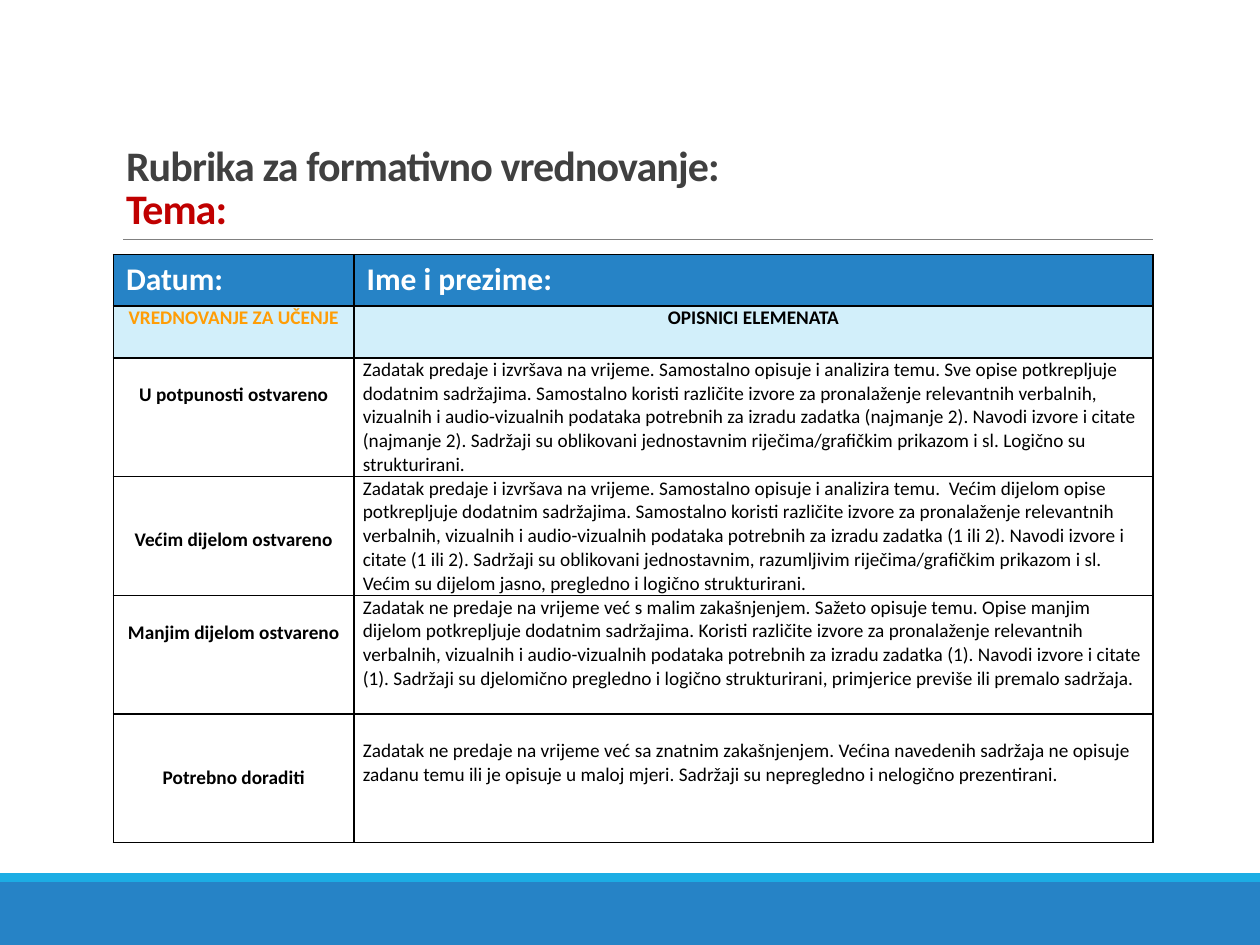
from pptx import Presentation
from pptx.dml.color import RGBColor
from pptx.enum import shapes, text
from pptx.oxml import parse_xml
from pptx.oxml.ns import nsdecls
from pptx.util import Inches, Pt

WIDTH, HEIGHT = 10, 7.5
LEFT, TABLE_TOP, TABLE_WIDTH = 0.9, 2.02, 8.25
FONT = "Calibri"
BLUE, CYAN, PALE, WHITE, BLACK = "2683C6", "1CADE4", "D2EFFA", "FFFFFF", "000000"

TITLE = [("Rubrika za formativno vrednovanje:", "404040"), ("Tema:", "C00000")]
BANDS = [(7, 0.5, BLUE), (6.93, 0.07, CYAN)]
COLUMNS = [1.91, 6.34]
HEADER = ["Datum:", "Ime i prezime:"]
SUBHEADER = [("VREDNOVANJE ZA UČENJE", "FF9D05"), ("OPISNICI ELEMENATA", BLACK)]
LEVELS = [
    ("U potpunosti ostvareno", 0.2, 0,
     "Zadatak predaje i izvršava na vrijeme. Samostalno opisuje i analizira temu. "
     "Sve opise potkrepljuje dodatnim sadržajima. Samostalno koristi različite izvore "
     "za pronalaženje relevantnih verbalnih, vizualnih i audio-vizualnih podataka "
     "potrebnih za izradu zadatka (najmanje 2). Navodi izvore i citate (najmanje 2). "
     "Sadržaji su oblikovani jednostavnim riječima/grafičkim prikazom i sl. "
     "Logično su strukturirani."),
    ("Većim dijelom ostvareno", 0.41, 0,
     "Zadatak predaje i izvršava na vrijeme. Samostalno opisuje i analizira temu.  "
     "Većim dijelom opise potkrepljuje dodatnim sadržajima. Samostalno koristi različite "
     "izvore za pronalaženje relevantnih verbalnih, vizualnih i audio-vizualnih podataka "
     "potrebnih za izradu zadatka (1 ili 2). Navodi izvore i citate (1 ili 2). Sadržaji su "
     "oblikovani jednostavnim, razumljivim riječima/grafičkim prikazom i sl. "
     "Većim su dijelom jasno, pregledno i logično strukturirani."),
    ("Manjim dijelom ostvareno", 0.2, 0,
     "Zadatak ne predaje na vrijeme već s malim zakašnjenjem. Sažeto opisuje temu. "
     "Opise manjim dijelom potkrepljuje dodatnim sadržajima. Koristi različite izvore za "
     "pronalaženje relevantnih verbalnih, vizualnih i audio-vizualnih podataka potrebnih "
     "za izradu zadatka (1). Navodi izvore i citate (1). Sadržaji su djelomično pregledno "
     "i logično strukturirani, primjerice previše ili premalo sadržaja."),
    ("Potrebno doraditi", 0.41, 0.2,
     "Zadatak ne predaje na vrijeme već sa znatnim zakašnjenjem. Većina navedenih "
     "sadržaja ne opisuje zadanu temu ili je opisuje u maloj mjeri. "
     "Sadržaji su nepregledno i nelogično prezentirani."),
]
ROWS = [0.41, 0.41, 0.94, 0.94, 0.94, 1.02]


def rgb(value):
    return RGBColor.from_string(value)


def add_band(slide, top, height, color):
    sp = slide.shapes.add_shape(shapes.MSO_SHAPE.RECTANGLE, 0, Inches(top),
                                Inches(WIDTH), Inches(height))
    sp.shadow.inherit = False
    sp.fill.solid()
    sp.fill.fore_color.rgb = rgb(color)
    sp.line.fill.background()


def add_rule(slide):
    line = slide.shapes.add_connector(shapes.MSO_CONNECTOR.STRAIGHT, Inches(0.98), Inches(1.9),
                                      Inches(LEFT + TABLE_WIDTH), Inches(1.9))
    line.line.color.rgb = rgb("808080")
    line.line.width = Pt(0.5)
    line._element.spPr.append(parse_xml(f"<a:effectLst {nsdecls('a')}/>"))


def set_title(slide):
    sp = slide.shapes.title
    sp.left, sp.top, sp.width, sp.height = map(Inches, (LEFT, 0.31, TABLE_WIDTH, 1.59))
    tf = sp.text_frame
    tf.auto_size = text.MSO_AUTO_SIZE.NONE
    tf.vertical_anchor = text.MSO_ANCHOR.BOTTOM
    p = tf.paragraphs[0]
    p.alignment = text.PP_ALIGN.LEFT
    p.line_spacing = 0.85
    p.font.name, p.font.size, p.font.bold = FONT, Pt(24), True
    for i, (words, color) in enumerate(TITLE):
        if i:
            p.add_line_break()
        r = p.add_run()
        r.text = words
        r.font.color.rgb = rgb(color)
        r.font._element.set("spc", "-50")


def fill_cell(cell, words, fill, color=BLACK, size=11, bold=True, center=False,
              top=0.0, side=0.07, bottom=0.0, before=1.2):
    cell.margin_left = cell.margin_right = Inches(side)
    cell.margin_top, cell.margin_bottom = Inches(top), Inches(bottom)
    cell.fill.solid()
    cell.fill.fore_color.rgb = rgb(fill)
    p = cell.text_frame.paragraphs[0]
    p.text = words
    p.alignment = text.PP_ALIGN.CENTER if center else text.PP_ALIGN.LEFT
    p.space_before = Pt(before)
    p.font.name, p.font.size, p.font.bold = FONT, Pt(size), bold
    p.font.color.rgb = rgb(color)
    tcPr = cell._tc.get_or_add_tcPr()
    for i, edge in enumerate(("lnL", "lnR", "lnT", "lnB")):
        tcPr.insert(i, parse_xml(
            f'<a:{edge} {nsdecls("a")} w="12700"><a:solidFill>'
            f'<a:srgbClr val="{BLACK}"/></a:solidFill></a:{edge}>'))


def add_rubric(slide):
    table = slide.shapes.add_table(len(ROWS), len(COLUMNS), Inches(LEFT), Inches(TABLE_TOP),
                                   Inches(TABLE_WIDTH), Inches(sum(ROWS))).table
    for column, width in zip(table.columns, COLUMNS):
        column.width = Inches(width)
    for row, height in zip(table.rows, ROWS):
        row.height = Inches(height)
    for c, words in enumerate(HEADER):
        fill_cell(table.cell(0, c), words, BLUE, WHITE, 18,
                  top=0.05, side=0.1, bottom=0.05, before=0)
    for c, (words, color) in enumerate(SUBHEADER):
        fill_cell(table.cell(1, c), words, PALE, color, center=True)
    for r, (level, level_top, detail_top, detail) in enumerate(LEVELS, 2):
        fill_cell(table.cell(r, 0), level, WHITE, center=True, top=level_top)
        fill_cell(table.cell(r, 1), detail, WHITE, bold=False, top=detail_top)


def main():
    prs = Presentation()
    prs.slide_width, prs.slide_height = Inches(WIDTH), Inches(HEIGHT)
    slide = prs.slides.add_slide(prs.slide_layouts[5])
    for band in BANDS:
        add_band(slide, *band)
    add_rule(slide)
    set_title(slide)
    add_rubric(slide)
    prs.save("out.pptx")


if __name__ == "__main__":
    main()
